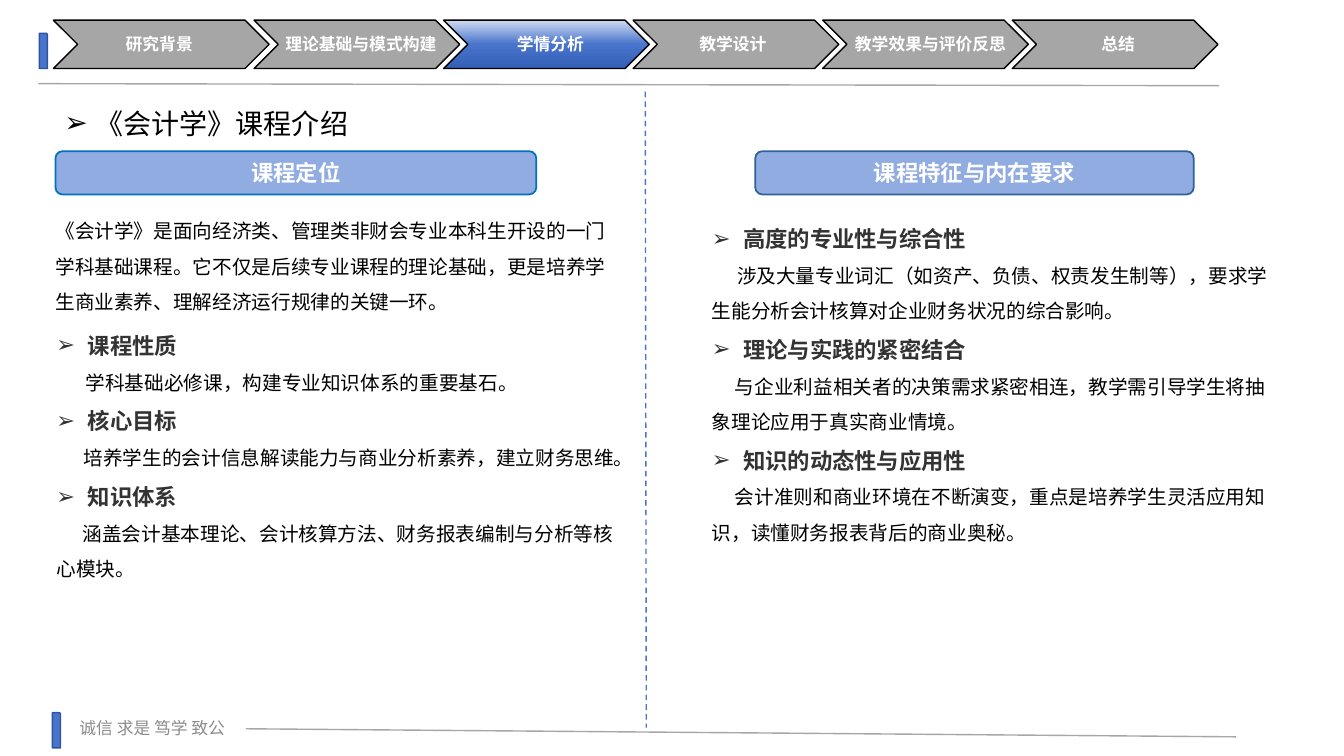
from copy import deepcopy
from dataclasses import dataclass
from lxml import etree
from pptx import Presentation
from pptx import util as u
from pptx.dml.color import RGBColor
from pptx.enum import dml, shapes, text
from pptx.oxml.ns import qn


@dataclass(frozen=True)
class Theme:
    """Colours, fonts and type sizes."""
    blue: str = "4874CB"
    edge: str = "2E54A1"
    pale: str = "91ACE0"
    gray: str = "A6A6A6"
    mute: str = "8C8C8C"
    dark: str = "333333"
    black: str = "000000"
    white: str = "FFFFFF"
    glow: tuple = ((0, "D1DCF2"), (0.5, "4874CB"), (1, "345FB6"))
    sans: str = "Arial"
    han: str = "Noto Sans CJK SC"
    small: float = 12
    body: float = 14
    head: float = 16
    title: float = 20


class Deck:
    """Draws styled elements on the current slide."""

    def __init__(self, theme):
        self.theme = theme
        self.file = Presentation()
        self.file.slide_width = u.Inches(13.33)
        self.file.slide_height = u.Inches(7.5)
        self.slide = self.file.slides.add_slide(self.file.slide_layouts[6])

    def shape(self, kind, box, fill, edge, width=1):
        """Add a preset shape with a plain or gradient fill."""
        item = self.slide.shapes.add_shape(kind, *map(u.Inches, box))
        item.shadow.inherit = False
        if isinstance(fill, tuple):
            self.blend(item, fill)
        else:
            item.fill.solid()
            item.fill.fore_color.rgb = RGBColor.from_string(fill)
        item.line.color.rgb = RGBColor.from_string(edge)
        item.line.width = u.Pt(width)
        return item

    def blend(self, item, stops):
        """Fill a shape with a top-down gradient."""
        item.fill.gradient()
        item.fill.gradient_angle = 270
        nodes = item._element.spPr.find(".//" + qn("a:gsLst"))
        nodes.append(deepcopy(nodes[0]))
        for stop, (place, tone) in zip(item.fill.gradient_stops, stops):
            stop.position = place
            stop.color.rgb = RGBColor.from_string(tone)

    def line(self, start, end, tone, dash=None):
        """Add a straight line."""
        ends = map(u.Inches, (*start, *end))
        item = self.slide.shapes.add_connector(shapes.MSO_CONNECTOR.STRAIGHT, *ends)
        item.line.color.rgb = RGBColor.from_string(tone)
        item.line.width = u.Pt(1)
        item.line.dash_style = dash
        etree.SubElement(item._element.spPr, qn("a:effectLst"))

    def text(self, box, inset=(0, 0)):
        """Add a wrapping text box and return its frame."""
        frame = self.slide.shapes.add_textbox(*map(u.Inches, box)).text_frame
        frame.word_wrap = True
        frame.margin_left = frame.margin_right = u.Inches(inset[0])
        frame.margin_top = frame.margin_bottom = u.Inches(inset[1])
        return frame

    def para(self, frame, words, size, tone, bold=False, font=None,
             align=None, space=None, left=0, first=0, mark=None):
        """Write one paragraph, using the empty first one if there is one."""
        para = frame.paragraphs[0] if not frame.text else frame.add_paragraph()
        para.text = words
        para.alignment = align
        para.line_spacing = space
        props = para._p.get_or_add_pPr()
        props.set("marL", str(u.Inches(left)))
        props.set("indent", str(u.Inches(first)))
        if mark:
            etree.SubElement(props, qn("a:buFont")).set("typeface", self.theme.sans)
            etree.SubElement(props, qn("a:buChar")).set("char", mark)
        style = para.font
        style.size = u.Pt(size)
        style.bold = bold
        style.color.rgb = RGBColor.from_string(tone)
        style.name = font or self.theme.han
        east = etree.SubElement(props.find(qn("a:defRPr")), qn("a:ea"))
        east.set("typeface", self.theme.han)

    def bar(self, left, top):
        """Add a small accent bar."""
        kind = shapes.MSO_SHAPE.ROUND_1_RECTANGLE
        self.shape(kind, (left, top, 0.08, 0.35), self.theme.blue, self.theme.edge)

    def step(self, box, name, left, live):
        """Add one navigation chevron and its label."""
        t = self.theme
        self.shape(shapes.MSO_SHAPE.CHEVRON, box, t.glow if live else t.gray, t.black)
        frame = self.text((left, 0.29, 1.7, 0.3), (0, 0.05))
        self.para(frame, name, t.small, t.white, True, t.sans, text.PP_ALIGN.CENTER)

    def banner(self, left, width, words, edge):
        """Add a rounded column heading."""
        t = self.theme
        box = (left, 1.5, width, 0.43)
        item = self.shape(shapes.MSO_SHAPE.ROUNDED_RECTANGLE, box, t.pale, edge, 1.25)
        item.text_frame.vertical_anchor = text.MSO_ANCHOR.MIDDLE
        self.para(item.text_frame, words, t.head, t.white, True,
                  align=text.PP_ALIGN.CENTER)

    def points(self, box, items):
        """Add bulleted headings, each with an indented paragraph."""
        t = self.theme
        frame = self.text(box)
        for head, first, body in items:
            self.para(frame, head, t.head, t.dark, True, space=1.5,
                      left=0.33, first=-0.31, mark="➢")
            self.para(frame, body, t.body, t.black, space=1.5, left=0.02, first=first)


STEPS = (("研究背景", 0.73), ("理论基础与模式构建", 2.73), ("学情分析", 4.61),
         ("教学设计", 6.42), ("教学效果与评价反思", 8.38), ("总结", 10.24))
INTRO = ("《会计学》是面向经济类、管理类非财会专业本科生开设的一门学科基础课程。"
         "它不仅是后续专业课程的理论基础，更是培养学生商业素养、理解经济运行规律的关键一环。")
ROLE = (
    ("课程性质", 0.29, "学科基础必修课，构建专业知识体系的重要基石。"),
    ("核心目标", 0.27, "培养学生的会计信息解读能力与商业分析素养，建立财务思维。"),
    ("知识体系", 0.26, "涵盖会计基本理论、会计核算方法、财务报表编制与分析等核心模块。"),
)
TRAITS = (
    ("高度的专业性与综合性", 0.25,
     "涉及大量专业词汇（如资产、负债、权责发生制等），要求学生能分析会计核算对企业财务状况的综合影响。"),
    ("理论与实践的紧密结合", 0.23,
     "与企业利益相关者的决策需求紧密相连，教学需引导学生将抽象理论应用于真实商业情境。"),
    ("知识的动态性与应用性", 0.23,
     "会计准则和商业环境在不断演变，重点是培养学生灵活应用知识，读懂财务报表背后的商业奥秘。"),
)


def main():
    """Build the course introduction slide."""
    t = Theme()
    deck = Deck(t)

    deck.bar(0.39, 0.33)
    for i, (name, left) in enumerate(STEPS):
        box = (0.64 + 1.88 * i, 0.2, 2.04, 0.48) if i else (0.53, 0.2, 2.14, 0.48)
        deck.step(box, name, left, name == "学情分析")
    deck.line((0.38, 0.83), (12.09, 0.85), t.gray)

    deck.bar(0.52, 7.07)
    motto = deck.text((0.69, 7.07, 2.9, 0.3), (0.1, 0.05))
    deck.para(motto, "诚信 求是 笃学 致公", t.small, t.mute, font=t.sans)
    deck.line((2.44, 7.23), (12.26, 7.31), t.gray)

    title = deck.text((0.54, 0.84, 10.98, 0.6), (0.1, 0.05))
    deck.para(title, "《会计学》课程介绍", t.title, t.black, space=1.5,
              left=0.31, first=-0.31, mark="➢")
    deck.line((6.4, 0.91), (6.41, 7.22), t.blue, dml.MSO_LINE.DASH)

    deck.banner(0.55, 4.77, "课程定位", "0070C0")
    intro = deck.text((0.55, 2.06, 5.53, 1.75))
    deck.para(intro, INTRO, t.body, t.black, space=1.5)
    deck.points((0.54, 3.16, 5.64, 2.7), ROLE)

    deck.banner(7.49, 4.35, "课程特征与内在要求", "30619B")
    deck.points((7.04, 2.1, 5.64, 3.4), TRAITS)
    deck.file.save("out.pptx")


if __name__ == "__main__":
    main()
